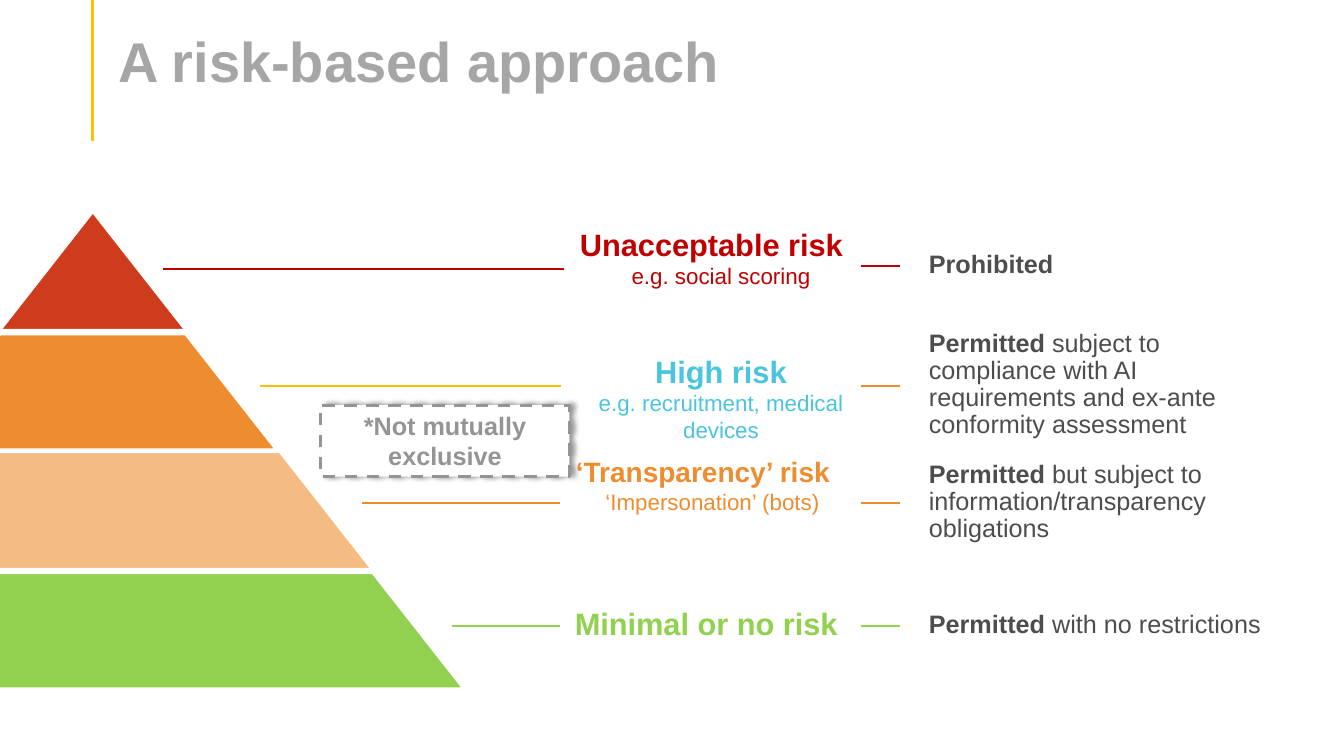
"""Build the slide about the risk-based approach: a pyramid with labels and outcomes."""
from dataclasses import dataclass
from typing import Optional

from lxml.etree import SubElement
from pptx import Presentation
from pptx.dml.color import RGBColor
from pptx.enum.dml import MSO_LINE
from pptx.enum.shapes import MSO_CONNECTOR, MSO_SHAPE
from pptx.enum.text import MSO_ANCHOR, MSO_AUTO_SIZE, PP_ALIGN
from pptx.oxml.ns import qn
from pptx.shapes.autoshape import Shape
from pptx.slide import Slide
from pptx.util import Cm, Pt

FONT = "Arial"
WHITE = RGBColor(0xFF, 0xFF, 0xFF)
BLACK = RGBColor(0x00, 0x00, 0x00)
TITLE_GREY = RGBColor(0xA6, 0xA6, 0xA6)
NOTE_GREY = RGBColor(0x94, 0x94, 0x94)
TEXT_GREY = RGBColor(0x4D, 0x4D, 0x4D)
YELLOW = RGBColor(0xFF, 0xC0, 0x00)
BRICK = RGBColor(0xCF, 0x3B, 0x1D)
RED = RGBColor(0xC0, 0x00, 0x00)
ORANGE = RGBColor(0xED, 0x8D, 0x2F)
PEACH = RGBColor(0xF4, 0xBB, 0x82)
GREEN = RGBColor(0x92, 0xD0, 0x50)
CYAN = RGBColor(0x4B, 0xC5, 0xDE)

APEX_X, APEX_Y = 2.34, 5.36
TIER_HEIGHT, TIER_STEP = 3.01, 2.36
OUTCOME_LEFT = 23.16
DASH_START, DASH_END = 21.69, 22.68
LABEL_INDENT = Cm(0.48)


@dataclass(frozen=True)
class Box:
    left: float
    top: float
    width: float
    height: float


@dataclass(frozen=True)
class Label:
    box: Box
    name: str
    color: RGBColor
    size: int = 22
    example: str = ""
    joined: bool = False
    side_inset: float = 0.25
    fill: Optional[RGBColor] = None


@dataclass(frozen=True)
class Outcome:
    top: float
    height: float
    verdict: str
    condition: str = ""
    width: float = 9.45


@dataclass(frozen=True)
class RiskLevel:
    tier_color: RGBColor
    border: float
    label: Label
    outcome: Outcome
    line_start: float
    line_end: float
    line_y: float
    line_color: RGBColor
    dash_y: float
    dash_color: RGBColor


LEVELS = [
    RiskLevel(BRICK, 1,
              Label(Box(14.35, 5.56, 7.16, 1.88), "Unacceptable risk", RED,
                    example="e.g. social scoring"),
              Outcome(6.22, 0.94, "Prohibited", width=10.24),
              4.11, 14.22, 6.78, RED, 6.71, RED),
    RiskLevel(ORANGE, 4.5,
              Label(Box(14.35, 8.76, 7.16, 2.57), "High risk", CYAN,
                    example="e.g. recruitment, medical devices", joined=True, fill=WHITE),
              Outcome(8.2, 3.02, "Permitted",
                      " subject to compliance with AI requirements and ex-ante conformity assessment"),
              6.55, 14.15, 9.73, YELLOW, 9.73, ORANGE),
    RiskLevel(PEACH, 2.25,
              Label(Box(13.92, 11.33, 7.59, 2.49), "‘Transparency’ risk", ORANGE, size=20,
                    example="‘Impersonation’ (bots)", side_inset=0.1),
              Outcome(11.51, 2.34, "Permitted",
                      " but subject to information/transparency obligations"),
              9.12, 14.12, 12.67, ORANGE, 12.67, ORANGE),
    RiskLevel(GREEN, 4.5,
              Label(Box(14.22, 15.11, 7.16, 1.19), "Minimal or no risk", GREEN),
              Outcome(15.29, 0.94, "Permitted", " with no restrictions"),
              11.4, 14.1, 15.77, GREEN, 15.77, GREEN),
]


def place(box: Box) -> tuple:
    """Return the box as Cm lengths."""
    return Cm(box.left), Cm(box.top), Cm(box.width), Cm(box.height)


def set_font(target, size: int, color: RGBColor, bold: Optional[bool] = None) -> None:
    """Format the font of a paragraph or run."""
    target.font.name = FONT
    target.font.size = Pt(size)
    target.font.color.rgb = color
    target.font.bold = bold


def add_line(slide: Slide, start: tuple, end: tuple, color: RGBColor, width: float = 1.5) -> None:
    """Draw a straight line without a shadow."""
    line = slide.shapes.add_connector(
        MSO_CONNECTOR.STRAIGHT, *(Cm(value) for value in (*start, *end)))
    line.line.color.rgb = color
    line.line.width = Pt(width)
    SubElement(line._element.spPr, qn("a:effectLst"))


def add_text_box(slide: Slide, box: Box) -> Shape:
    """Add a wrapping text box that grows with its text."""
    shape = slide.shapes.add_textbox(*place(box))
    shape.text_frame.word_wrap = True
    shape.text_frame.auto_size = MSO_AUTO_SIZE.SHAPE_TO_FIT_TEXT
    return shape


def add_title(slide: Slide) -> None:
    """Fill and place the title."""
    title = slide.shapes.title
    title.left, title.top, title.width, title.height = place(Box(2.72, 0.2, 29.21, 2.18))
    frame = title.text_frame
    frame.text = "A risk-based approach"
    frame.auto_size = MSO_AUTO_SIZE.NONE
    frame.vertical_anchor = MSO_ANCHOR.BOTTOM
    frame.margin_bottom = 0
    paragraph = frame.paragraphs[0]
    paragraph.alignment = PP_ALIGN.LEFT
    paragraph.line_spacing = 0.9
    set_font(paragraph, 40, TITLE_GREY, True)


def add_tier(slide: Slide, index: int, level: RiskLevel) -> None:
    """Draw one tier of the pyramid, counted from the apex."""
    top, bottom = (APEX_Y + TIER_HEIGHT * step for step in (index, index + 1))
    upper, lower = TIER_STEP * index, TIER_STEP * (index + 1)
    builder = slide.shapes.build_freeform(Cm(APEX_X - lower), Cm(bottom))
    builder.add_line_segments([(Cm(x), Cm(y)) for x, y in (
        (APEX_X - upper, top), (APEX_X + upper, top), (APEX_X + lower, bottom))])
    tier = builder.convert_to_shape()
    tier.shadow.inherit = False
    tier.fill.solid()
    tier.fill.fore_color.rgb = level.tier_color
    tier.line.color.rgb = WHITE
    tier.line.width = Pt(level.border)


def add_label(slide: Slide, label: Label) -> None:
    """Write the name of a risk level with its example."""
    shape = add_text_box(slide, label.box)
    if label.fill is not None:
        shape.fill.solid()
        shape.fill.fore_color.rgb = label.fill
    frame = shape.text_frame
    frame.margin_left = frame.margin_right = Cm(label.side_inset)
    paragraph = frame.paragraphs[0]
    name = paragraph.add_run()
    name.text = label.name
    set_font(name, label.size, label.color, True)
    if label.example:
        if label.joined:
            paragraph.add_line_break()
        else:
            paragraph = frame.add_paragraph()
        example = paragraph.add_run()
        example.text = label.example
        set_font(example, 16, label.color, False)
        paragraph._p.get_or_add_pPr().set("marL", str(LABEL_INDENT))
    for paragraph in frame.paragraphs:
        paragraph.alignment = PP_ALIGN.CENTER


def add_outcome(slide: Slide, outcome: Outcome) -> None:
    """Write what follows from a risk level."""
    shape = add_text_box(slide, Box(OUTCOME_LEFT, outcome.top, outcome.width, outcome.height))
    paragraph = shape.text_frame.paragraphs[0]
    paragraph.line_spacing = 0.9
    set_font(paragraph, 18, TEXT_GREY)
    for text, bold in ((outcome.verdict, True), (outcome.condition, False)):
        if text:
            run = paragraph.add_run()
            run.text = text
            set_font(run, 18, TEXT_GREY, bold)


def add_note(slide: Slide) -> None:
    """Draw the dashed note with its shadow."""
    note = slide.shapes.add_shape(MSO_SHAPE.RECTANGLE, *place(Box(8.08, 10.21, 6.27, 1.8)))
    note.fill.solid()
    note.fill.fore_color.rgb = WHITE
    note.line.color.rgb = NOTE_GREY
    note.line.width = Pt(2.25)
    note.line.dash_style = MSO_LINE.DASH
    note.shadow.inherit = False
    effects = note._element.spPr.find(qn("a:effectLst"))
    shadow = SubElement(effects, qn("a:outerShdw"), blurRad=str(Pt(4)), dist=str(Pt(3)),
                        dir="0", algn="l", rotWithShape="0")
    color = SubElement(shadow, qn("a:srgbClr"), val=str(BLACK))
    SubElement(color, qn("a:alpha"), val="40000")
    frame = note.text_frame
    frame.word_wrap = True
    frame.vertical_anchor = MSO_ANCHOR.TOP
    frame.text = "*Not mutually exclusive"
    frame.paragraphs[0].alignment = PP_ALIGN.CENTER
    set_font(frame.paragraphs[0], 18, NOTE_GREY, True)


def main() -> None:
    """Build and save the presentation."""
    presentation = Presentation()
    presentation.slide_width, presentation.slide_height = Cm(33.87), Cm(19.05)
    slide = presentation.slides.add_slide(presentation.slide_layouts[5])
    add_line(slide, (APEX_X, 0), (APEX_X, 3.56), YELLOW, 2.25)
    add_title(slide)
    for index, level in enumerate(LEVELS):
        add_tier(slide, index, level)
    for level in LEVELS:
        add_label(slide, level.label)
        add_outcome(slide, level.outcome)
        add_line(slide, (level.line_start, level.line_y), (level.line_end, level.line_y),
                 level.line_color)
        add_line(slide, (DASH_START, level.dash_y), (DASH_END, level.dash_y), level.dash_color)
    add_note(slide)
    presentation.save("out.pptx")


if __name__ == "__main__":
    main()
